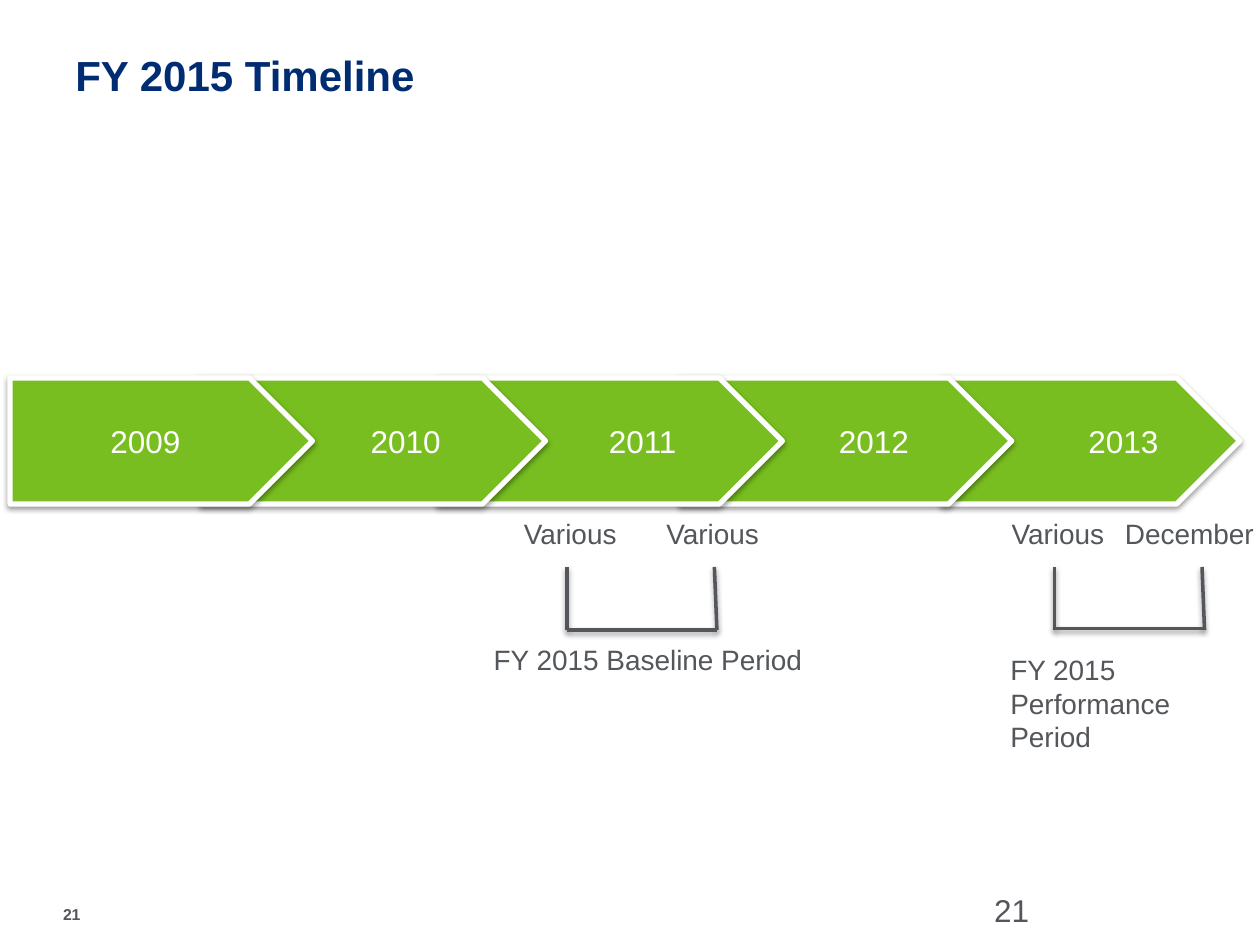
from pptx import Presentation
from pptx.dml.color import RGBColor
from pptx.enum.shapes import MSO_CONNECTOR, MSO_SHAPE
from pptx.enum.text import MSO_ANCHOR, PP_ALIGN
from pptx.oxml import parse_xml
from pptx.oxml.ns import nsdecls
from pptx.util import Inches, Pt

PENTAGON = MSO_SHAPE.PENTAGON
STRAIGHT = MSO_CONNECTOR.STRAIGHT
MIDDLE, CENTER, LEFT = MSO_ANCHOR.MIDDLE, PP_ALIGN.CENTER, PP_ALIGN.LEFT
COLUMNS, ROWS = 10, 7.5
SHADOW = (
    f'<a:effectLst {nsdecls("a")}>'
    '<a:outerShdw blurRad="40000" dist="20000" dir="5400000" rotWithShape="0">'
    '<a:srgbClr val="000000"><a:alpha val="38000"/></a:srgbClr>'
    '</a:outerShdw></a:effectLst>'
)


def color(hex_string):
    return RGBColor.from_string(hex_string)


class Timeline:
    """Style and current slide; positions are grid columns and rows."""

    font, navy, gray, green, white = "Arial", "002D72", "53565A", "78BE20", "FFFFFF"

    def __init__(self, prs):
        self.col = prs.slide_width / COLUMNS
        self.row = prs.slide_height / ROWS
        self.slide = prs.slides.add_slide(prs.slide_layouts[6])

    def x(self, columns):
        return round(columns * self.col)

    def y(self, rows):
        return round(rows * self.row)

    def box(self, left, top, width, height):
        return self.x(left), self.y(top), self.x(width), self.y(height)

    def set_text(self, tf, text, size, hex_string, bold=False, align=LEFT):
        tf.text = text
        p = tf.paragraphs[0]
        p.alignment = align
        font = p.runs[0].font
        font.name, font.size, font.bold = self.font, Pt(size), bold
        font.color.rgb = color(hex_string)

    def text(self, text, place, size=16, hex_string=gray, bold=False,
             wrap=True, inset=(0.1, 0.05)):
        tf = self.slide.shapes.add_textbox(*self.box(*place)).text_frame
        tf.word_wrap = wrap
        tf.margin_left, tf.margin_top = self.x(inset[0]), self.y(inset[1])
        self.set_text(tf, text, size, hex_string, bold)

    def arrow(self, year, left, width, indent):
        s = self.slide.shapes.add_shape(PENTAGON, *self.box(left, 3, width, 1))
        s.fill.solid()
        s.fill.fore_color.rgb = color(self.green)
        s.line.color.rgb = color(self.white)
        s.line.width = Pt(3)
        s._element.spPr.append(parse_xml(SHADOW))
        tf = s.text_frame
        tf.vertical_anchor = MIDDLE
        tf.margin_left = self.x(0.1 + indent)
        self.set_text(tf, year, 18, self.white, align=CENTER)

    def line(self, x1, y1, x2, y2):
        c = self.slide.shapes.add_connector(
            STRAIGHT, self.x(x1), self.y(y1), self.x(x2), self.y(y2))
        c.line.color.rgb = color(self.gray)
        c.line.width = Pt(2)
        c._element.spPr.append(parse_xml(SHADOW))

    def bracket(self, left, right, bottom):
        self.line(left, 4.5, left, 5)
        self.line(right - 0.02, 4.5, right, 5)
        self.line(left, bottom, right, bottom)


def main():
    prs = Presentation()
    prs.slide_width, prs.slide_height = Inches(10), Inches(7.5)
    timeline = Timeline(prs)

    # Title and page numbers
    timeline.text("21", (0.5, 7.18, 0.32, 0.25), 9, bold=True, inset=(0, 0))
    timeline.text("FY 2015 Timeline", (0.5, 0.3, 9, 1.25), 24, timeline.navy,
                  bold=True, inset=(0.1, 0.09))
    timeline.text("21", (7.58, 7.02, 2.33, 0.4), 18, inset=(0.31, 0.05))

    # Year arrows, latest first so that each earlier one overlaps the next
    for year, left, width, indent in (
        ("2013", 7.48, 2.36, 0.76),
        ("2012", 5.4, 2.63, 0.69),
        ("2011", 3.48, 2.73, 0.76),
        ("2010", 1.6, 2.73, 0.76),
        ("2009", 0.08, 2.4, 0),
    ):
        timeline.arrow(year, left, width, indent)

    # Period brackets
    timeline.bracket(4.5, 5.69, 5)
    timeline.bracket(8.37, 9.56, 4.99)

    # Dates above the brackets
    for label, left, width in (
        ("Various", 4.06, 0.95),
        ("Various", 5.19, 0.95),
        ("Various", 7.93, 0.95),
        ("December", 8.83, 1.24),
    ):
        timeline.text(label, (left, 4.05, width, 0.37), wrap=False)

    # Period names below the brackets
    timeline.text("FY 2015 Baseline Period", (3.82, 5.05, 2.68, 0.37), wrap=False)
    timeline.text("FY 2015 Performance Period", (7.92, 5.13, 2.08, 0.91))

    prs.save("out.pptx")


if __name__ == "__main__":
    main()
